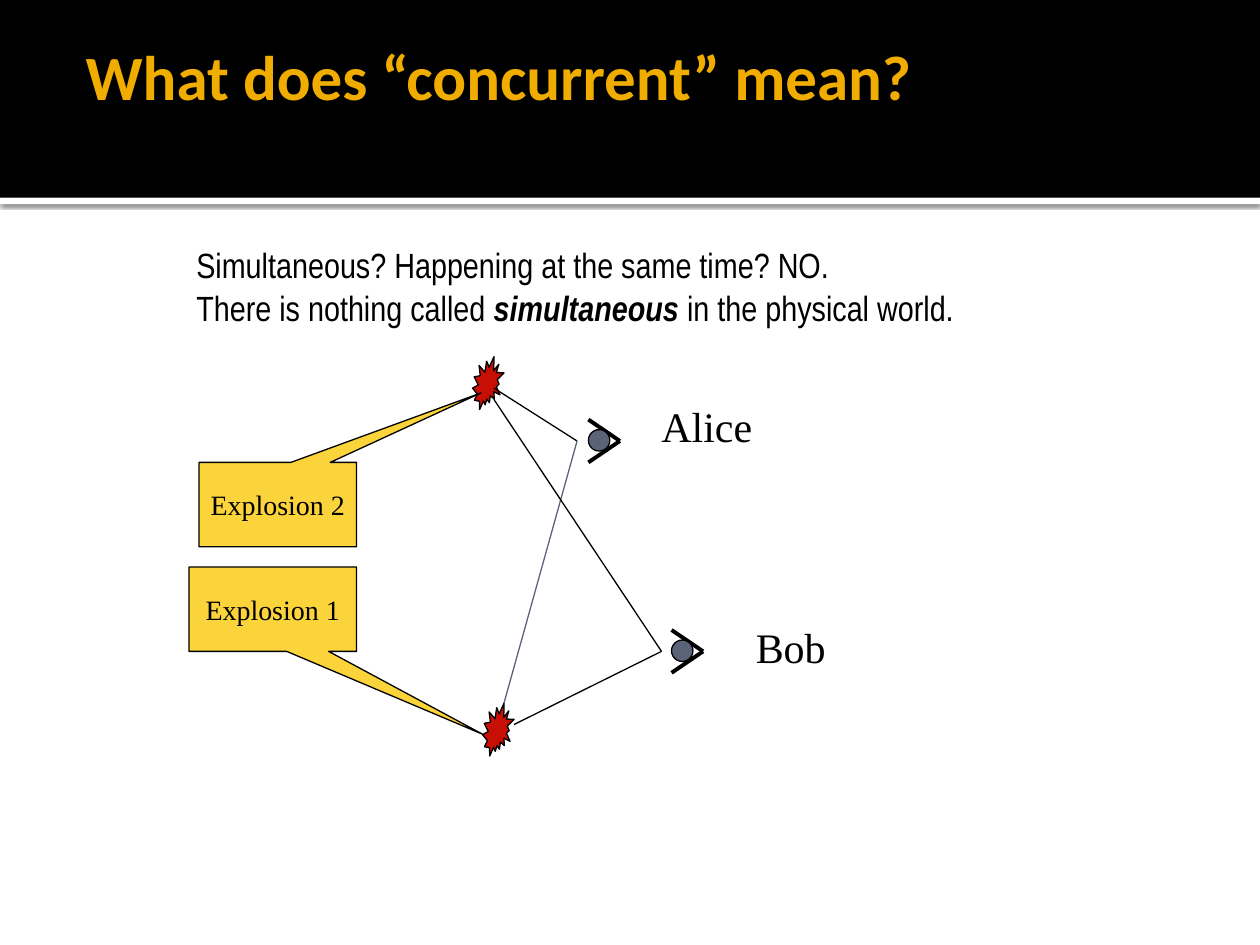
"""Build a slide on what concurrent means, with two explosions and two observers."""
from lxml import etree
from pptx import Presentation
from pptx.dml.color import RGBColor
from pptx.enum import shapes, text
from pptx.oxml import ns
from pptx.util import Inches, Pt

COLORS = {"black": "000000", "white": "FFFFFF", "title": "F0AD00",
          "blast": "C70F05", "slate": "5A6378", "callout": "FAD43A"}
SERIF = "Times New Roman"
TITLE = "What does “concurrent” mean?"
BODY = [
    [("Simultaneous? Happening at the same time? NO.", False)],
    [("There is nothing called ", False), ("simultaneous", True),
     (" in the physical world.", False)],
]
BANDS = [((0, 1.57, 10, 0.05), "white"), ((0, 0, 10, 1.57), "black")]
BLASTS = [(3.75, 2.83), (3.83, 5.58)]
OBSERVERS = [
    ("Alice", (4.67, 3.33), (5.15, 3.13, 0.92, 0.5)),
    ("Bob", (5.33, 5.0), (5.9, 4.88, 0.76, 0.5)),
]
SIGHT_LINES = [
    ((3.92, 3.08), (4.58, 3.5), "black"),
    ((4.58, 3.5), (4, 5.58), "slate"),
    ((3.92, 3.17), (5.25, 5.17), "black"),
    ((5.25, 5.17), (4.08, 5.75), "black"),
]
CALLOUTS = [
    ("Explosion 1", (1.5, 4.5, 1.33, 0.67), (1.255, 1.484)),
    ("Explosion 2", (1.58, 3.67, 1.25, 0.67), (1.29, -1.323)),
]


def rgb(name):
    return RGBColor.from_string(COLORS[name])


def write(shape, paragraphs, font=SERIF, size=16, color="black", bold=False,
          align=text.PP_ALIGN.LEFT, anchor=text.MSO_ANCHOR.TOP, wrap=False,
          insets=(0.1, 0.05, 0.1, 0.05), indent=None, before=0):
    frame = shape.text_frame
    frame.word_wrap = wrap
    frame.auto_size = text.MSO_AUTO_SIZE.NONE
    frame.vertical_anchor = anchor
    for side, inset in zip(("left", "top", "right", "bottom"), insets):
        setattr(frame, f"margin_{side}", Inches(inset))
    for index, runs in enumerate(paragraphs):
        paragraph = frame.add_paragraph() if index else frame.paragraphs[0]
        paragraph.alignment = align
        paragraph.space_before = Pt(before)
        if indent:
            properties = paragraph._p.get_or_add_pPr()
            properties.set("marL", str(Inches(indent[0])))
            properties.set("indent", str(Inches(indent[1])))
        for words, emphasis in runs:
            run = paragraph.add_run()
            run.text = words
            run.font.name, run.font.size = font, Pt(size)
            run.font.bold = bold or emphasis
            run.font.italic = emphasis
            run.font.color.rgb = rgb(color)


def add_shape(slide, preset, box, fill, outlined=True):
    shape = slide.shapes.add_shape(preset, *map(Inches, box))
    shape.shadow.inherit = False
    shape.fill.solid()
    shape.fill.fore_color.rgb = rgb(fill)
    if outlined:
        shape.line.color.rgb = rgb("black")
        shape.line.width = Pt(0.75)
    else:
        shape.line.fill.background()
    return shape


def add_line(slide, start, end, color="black", width=0.75):
    line = slide.shapes.add_connector(
        shapes.MSO_CONNECTOR.STRAIGHT, *map(Inches, (*start, *end)))
    line.line.color.rgb = rgb(color)
    line.line.width = Pt(width)
    etree.SubElement(line._element.spPr, ns.qn("a:effectLst"))


def add_text_box(slide, box, paragraphs, **style):
    write(slide.shapes.add_textbox(*map(Inches, box)), paragraphs, **style)


def add_shadow(shape):
    effects = shape._element.spPr.find(ns.qn("a:effectLst"))
    shadow = etree.SubElement(
        effects, ns.qn("a:outerShdw"), blurRad=str(Pt(2.5)), dist=str(Pt(0.8)),
        dir="5400000", algn="tl", rotWithShape="0")
    color = etree.SubElement(shadow, ns.qn("a:srgbClr"), val=COLORS["black"])
    etree.SubElement(color, ns.qn("a:alpha"), val="60000")


def add_header(slide):
    preset = shapes.MSO_SHAPE.RECTANGLE
    strip, _ = [add_shape(slide, preset, box, fill, outlined=False)
                for box, fill in BANDS]
    add_shadow(strip)
    title = slide.shapes.title
    title.left, title.top, title.width, title.height = map(
        Inches, (0.58, 0, 8.93, 1.19))
    write(title, [[(TITLE, False)]], font="Calibri", size=36, color="title",
          bold=True, anchor=text.MSO_ANCHOR.MIDDLE, wrap=True,
          insets=(0.1, 0.05, 0.05, 0.05))
    slide.shapes._spTree.append(title._element)


def add_eye(slide, left, top):
    tip = (left + 0.25, top + 0.17)
    add_line(slide, (left, top), tip, width=2.25)
    add_line(slide, tip, (left, top + 0.34), width=2.25)
    add_shape(slide, shapes.MSO_SHAPE.OVAL, (left, top + 0.08, 0.17, 0.17), "slate")


def main():
    presentation = Presentation()
    presentation.slide_width, presentation.slide_height = Inches(10), Inches(7.5)
    slide = presentation.slides.add_slide(presentation.slide_layouts[5])
    add_header(slide)
    add_text_box(slide, (1.33, 1.83, 6.83, 4.5), BODY, font="Arial Narrow",
                 size=20, wrap=True, insets=(0.1, 0.1, 0.1, 0.05),
                 indent=(0.48, -0.35), before=1)
    for corner in BLASTS:
        add_shape(slide, shapes.MSO_SHAPE.EXPLOSION2, (*corner, 0.25, 0.42), "blast")
    for _, corner, _ in OBSERVERS:
        add_eye(slide, *corner)
    for start, end, color in SIGHT_LINES:
        add_line(slide, start, end, color)
    for name, _, box in OBSERVERS:
        add_text_box(slide, box, [[(name, False)]], size=24)
    for label, box, pointer in CALLOUTS:
        callout = add_shape(
            slide, shapes.MSO_SHAPE.RECTANGULAR_CALLOUT, box, "callout")
        for index, offset in enumerate(pointer):
            callout.adjustments[index] = offset
        write(callout, [[(label, False)]], align=text.PP_ALIGN.CENTER,
              anchor=text.MSO_ANCHOR.MIDDLE)
    presentation.save("out.pptx")


if __name__ == "__main__":
    main()
